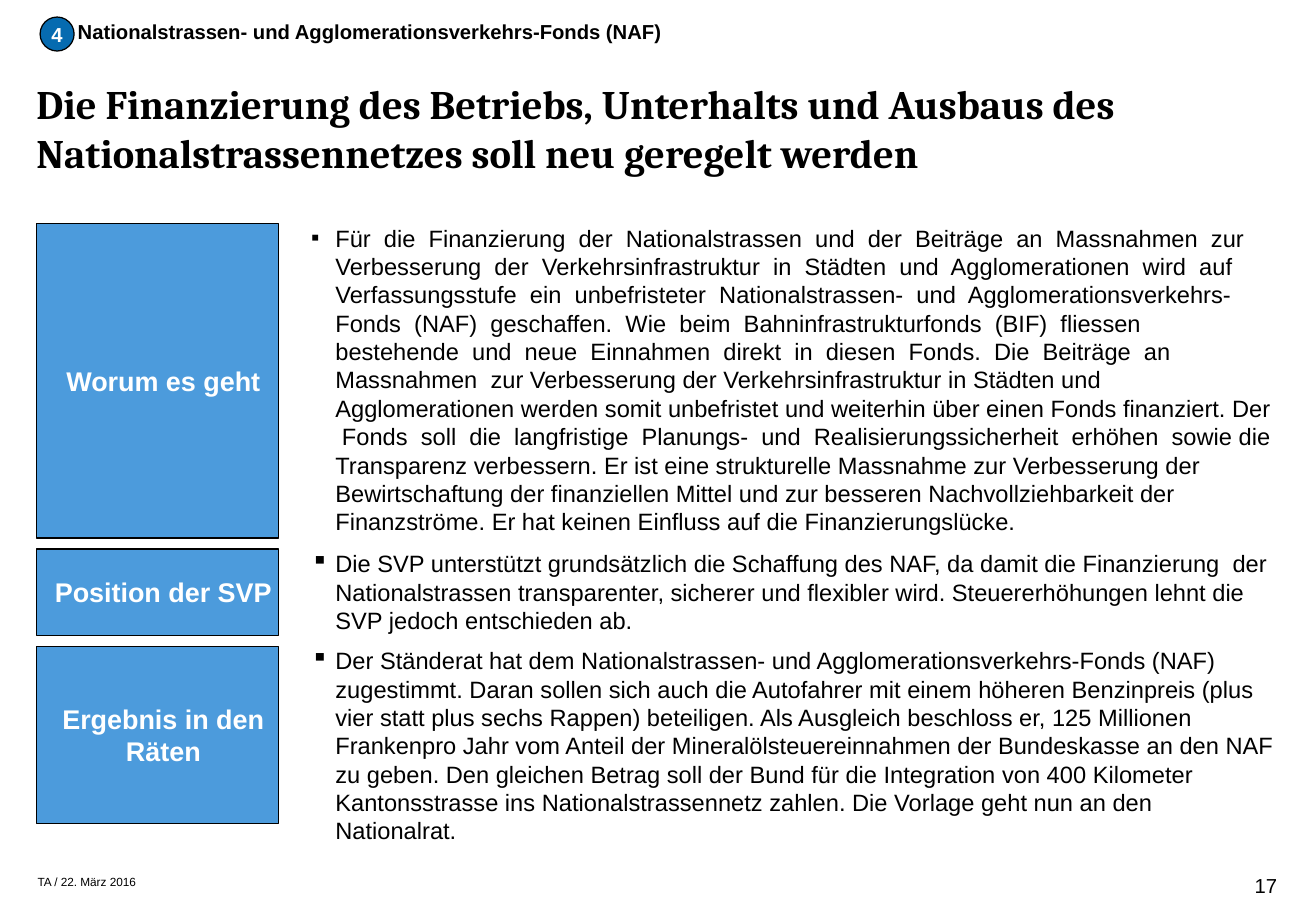
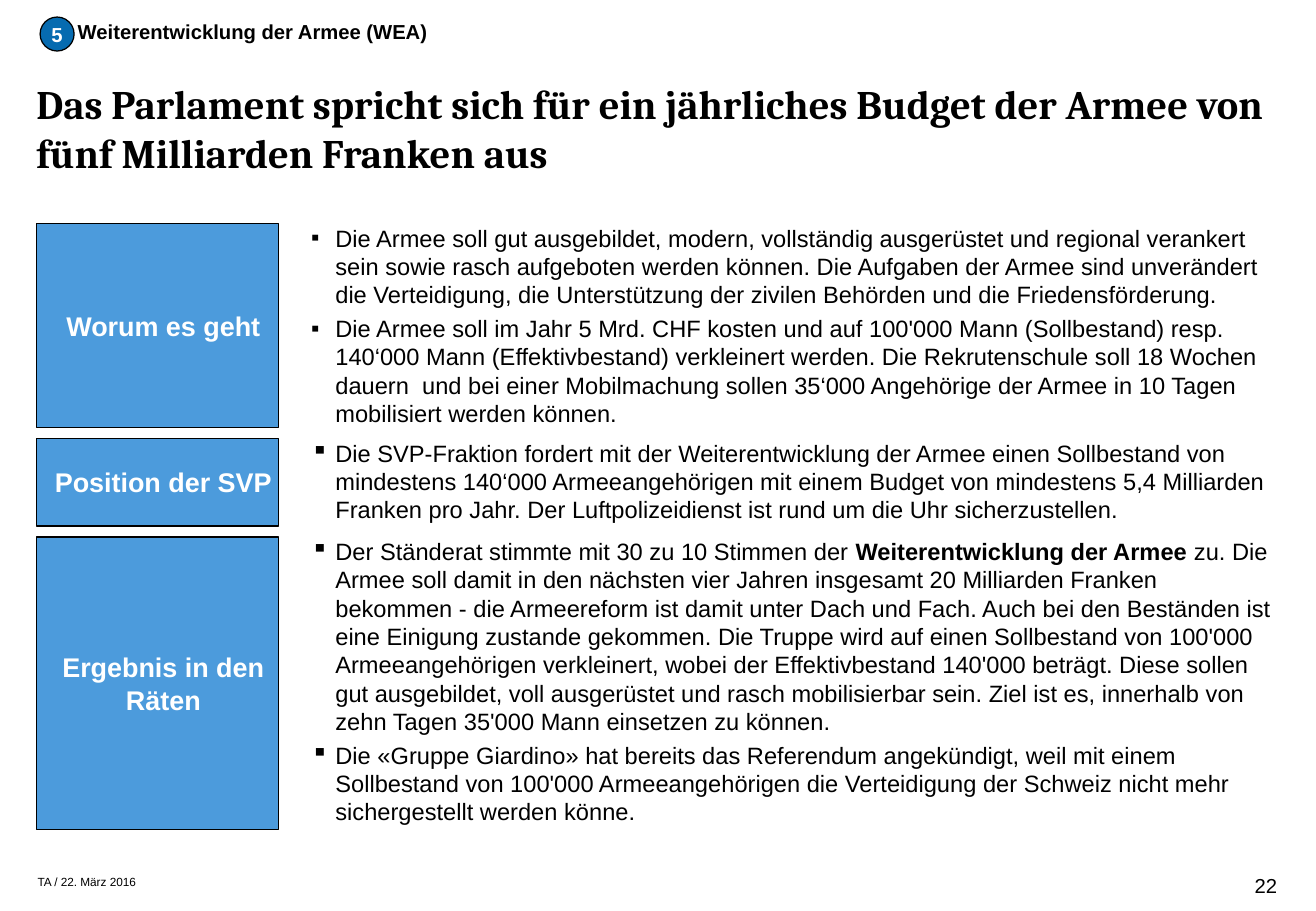
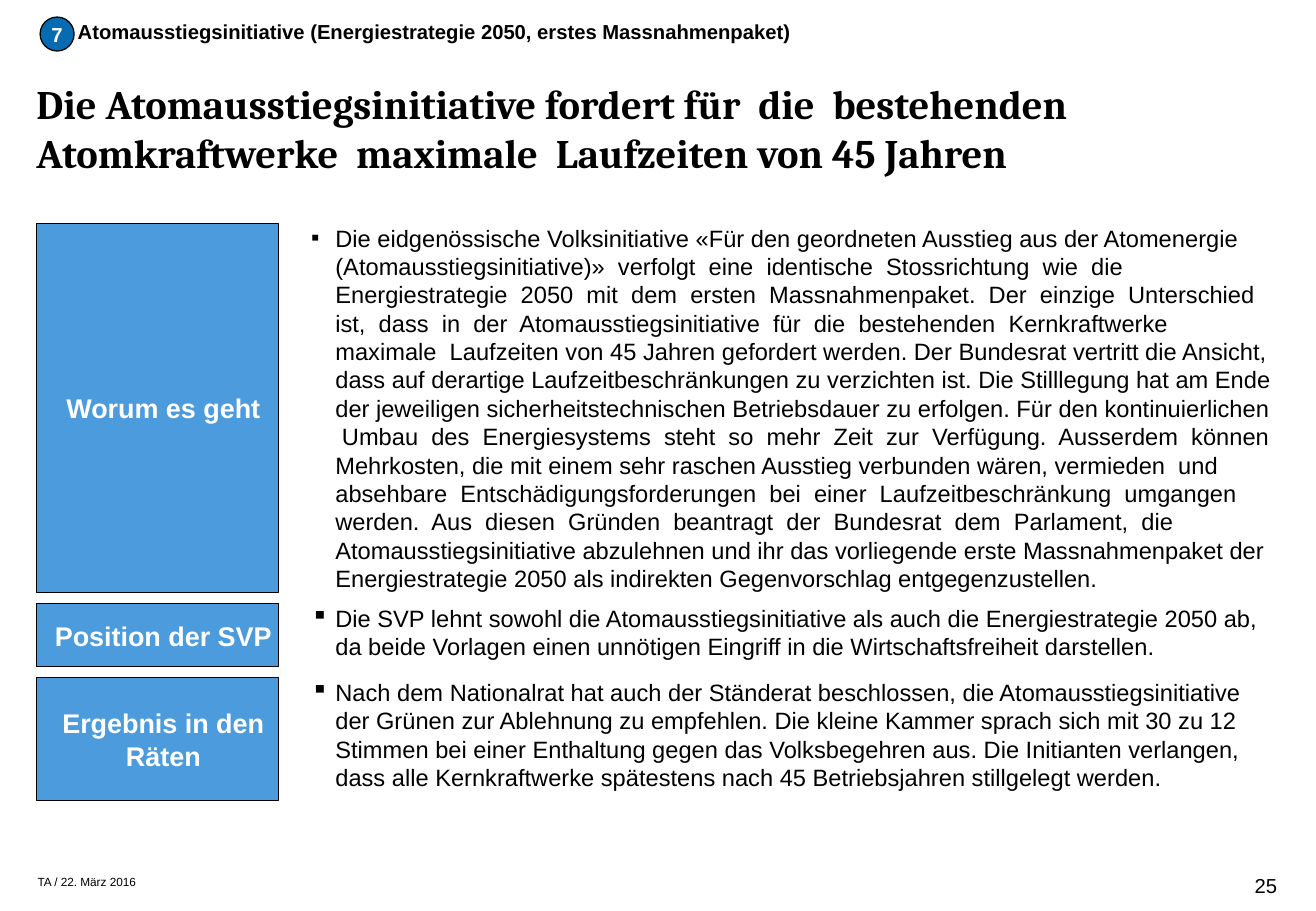
"""Three session-review slides: topic header, title and three labelled rows of bullets."""
from lxml import etree
from pptx import Presentation
from pptx.dml.color import RGBColor
from pptx.enum import shapes, text
from pptx.oxml.ns import qn
from pptx.util import Inches, Pt

COLOURS = {"label": "4C9BDC", "badge": "066BB0", "ink": "000000", "paper": "FFFFFF"}
LABELS = ["Worum es geht", "Position der SVP", "Ergebnis in den Räten"]
LEFT, LABEL_WIDTH = 0.3, 1.99
TEXT_LEFT, TEXT_WIDTH = 2.56, 7.95
ROWS_TOP, ROW_GAP = 1.84, 0.09

TOPICS = [
    {
        "number": "4",
        "page": "17",
        "topic": "Nationalstrassen- und Agglomerationsverkehrs-Fonds (NAF)",
        "title": "Die Finanzierung des Betriebs, Unterhalts und Ausbaus des "
                 "Nationalstrassennetzes soll neu geregelt werden",
        "rows": [
            (2.59, [" ".join([
                "Für  die  Finanzierung  der  Nationalstrassen  und  der  Beiträge  an  Massnahmen  zur "
                "Verbesserung  der  Verkehrsinfrastruktur  in  Städten  und  Agglomerationen  wird  auf  "
                "Verfassungsstufe  ein  unbefristeter  Nationalstrassen-  und  Agglomerationsverkehrs-"
                "Fonds  (NAF)  geschaffen.  Wie  beim  Bahninfrastrukturfonds  (BIF)  fliessen  "
                "bestehende  und  neue  Einnahmen  direkt  in  diesen  Fonds.  Die  Beiträge  an  "
                "Massnahmen  zur Verbesserung der Verkehrsinfrastruktur in Städten und "
                "Agglomerationen werden somit unbefristet und weiterhin über einen Fonds finanziert.",
                "Der  Fonds  soll  die  langfristige  Planungs-  und  Realisierungssicherheit  erhöhen  "
                "sowie die Transparenz verbessern. Er ist eine strukturelle Massnahme zur Verbesserung "
                "der Bewirtschaftung der finanziellen Mittel und zur besseren Nachvollziehbarkeit der "
                "Finanzströme. Er hat keinen Einfluss auf die Finanzierungslücke.",
            ])]),
            (0.71, [
                "Die SVP unterstützt grundsätzlich die Schaffung des NAF, da damit die Finanzierung  der  "
                "Nationalstrassen transparenter, sicherer und flexibler wird. Steuererhöhungen lehnt die "
                "SVP jedoch entschieden ab.",
            ]),
            (1.46, [
                "Der Ständerat hat dem Nationalstrassen- und Agglomerationsverkehrs-Fonds (NAF) "
                "zugestimmt. Daran sollen sich auch die Autofahrer mit einem höheren Benzinpreis (plus "
                "vier statt plus sechs Rappen) beteiligen. Als Ausgleich beschloss er, 125 Millionen "
                "Frankenpro Jahr vom Anteil der Mineralölsteuereinnahmen der Bundeskasse an den NAF "
                "zu geben. Den gleichen Betrag soll der Bund für die Integration von 400 Kilometer "
                "Kantonsstrasse ins Nationalstrassennetz zahlen. Die Vorlage geht nun an den "
                "Nationalrat.",
            ]),
        ],
    },
    {
        "number": "5",
        "page": "22",
        "topic": "Weiterentwicklung der Armee (WEA)",
        "title": "Das Parlament spricht sich für ein jährliches Budget der Armee von "
                 "fünf Milliarden Franken aus",
        "rows": [
            (1.68, [
                "Die Armee soll gut ausgebildet, modern, vollständig ausgerüstet und regional verankert "
                "sein sowie rasch aufgeboten werden können. Die Aufgaben der Armee sind unverändert "
                "die Verteidigung, die Unterstützung der zivilen Behörden und die Friedensförderung.",
                "Die Armee soll im Jahr 5 Mrd. CHF kosten und auf 100'000 Mann (Sollbestand) resp. "
                "140‘000 Mann (Effektivbestand) verkleinert werden. Die Rekrutenschule soll 18 Wochen "
                "dauern  und bei einer Mobilmachung sollen 35‘000 Angehörige der Armee in 10 Tagen "
                "mobilisiert werden können.",
            ]),
            (0.72, [
                "Die SVP-Fraktion fordert mit der Weiterentwicklung der Armee einen Sollbestand von "
                "mindestens 140‘000 Armeeangehörigen mit einem Budget von mindestens 5,4 Milliarden "
                "Franken pro Jahr. Der Luftpolizeidienst ist rund um die Uhr sicherzustellen.",
            ]),
            (2.41, [
                "Der Ständerat stimmte mit 30 zu 10 Stimmen der **Weiterentwicklung der Armee **zu. Die "
                "Armee soll damit in den nächsten vier Jahren insgesamt 20 Milliarden Franken "
                "bekommen - die Armeereform ist damit unter Dach und Fach. Auch bei den Beständen ist "
                "eine Einigung zustande gekommen. Die Truppe wird auf einen Sollbestand von 100'000 "
                "Armeeangehörigen verkleinert, wobei der Effektivbestand 140'000 beträgt. Diese sollen "
                "gut ausgebildet, voll ausgerüstet und rasch mobilisierbar sein. Ziel ist es, innerhalb von "
                "zehn Tagen 35'000 Mann einsetzen zu können.",
                "Die «Gruppe Giardino» hat bereits das Referendum angekündigt, weil mit einem "
                "Sollbestand von 100'000 Armeeangehörigen die Verteidigung der Schweiz nicht mehr "
                "sichergestellt werden könne.",
            ]),
        ],
    },
    {
        "number": "7",
        "page": "25",
        "topic": "Atomausstiegsinitiative (Energiestrategie 2050, erstes Massnahmenpaket)",
        "title": "Die Atomausstiegsinitiative fordert für  die  bestehenden  "
                 "Atomkraftwerke  maximale  Laufzeiten von 45 Jahren",
        "rows": [
            (3.04, [" ".join([
                "Die eidgenössische Volksinitiative «Für den geordneten Ausstieg aus der Atomenergie  "
                "(Atomausstiegsinitiative)»  verfolgt  eine  identische  Stossrichtung  wie  die  "
                "Energiestrategie  2050  mit  dem  ersten  Massnahmenpaket.  Der  einzige  Unterschied  "
                "ist,  dass  in  der  Atomausstiegsinitiative  für  die  bestehenden  Kernkraftwerke  "
                "maximale  Laufzeiten von 45 Jahren gefordert werden.",
                "Der Bundesrat vertritt die Ansicht, "
                "dass auf derartige Laufzeitbeschränkungen zu verzichten ist. Die Stilllegung hat am Ende "
                "der jeweiligen sicherheitstechnischen Betriebsdauer zu erfolgen. Für den kontinuierlichen  "
                "Umbau  des  Energiesystems  steht  so  mehr  Zeit  zur  Verfügung.  Ausserdem  können "
                "Mehrkosten, die mit einem sehr raschen Ausstieg verbunden wären, vermieden  und  "
                "absehbare  Entschädigungsforderungen  bei  einer  Laufzeitbeschränkung  umgangen  "
                "werden.  Aus  diesen  Gründen  beantragt  der  Bundesrat  dem  Parlament,  die "
                "Atomausstiegsinitiative abzulehnen und ihr das vorliegende erste Massnahmenpaket der "
                "Energiestrategie 2050 als indirekten Gegenvorschlag entgegenzustellen.",
            ])]),
            (0.52, [
                "Die SVP lehnt sowohl die Atomausstiegsinitiative als auch die Energiestrategie 2050 ab, "
                "da beide Vorlagen einen unnötigen Eingriff in die Wirtschaftsfreiheit darstellen.",
            ]),
            (1.01, [
                "Nach dem Nationalrat hat auch der Ständerat beschlossen, die Atomausstiegsinitiative "
                "der Grünen zur Ablehnung zu empfehlen. Die kleine Kammer sprach sich mit 30 zu 12 "
                "Stimmen bei einer Enthaltung gegen das Volksbegehren aus. Die Initianten verlangen, "
                "dass alle Kernkraftwerke spätestens nach 45 Betriebsjahren stillgelegt werden.",
            ]),
        ],
    },
]


def write(shape, paragraphs, size, font="Arial", colour="ink", bold=False, bullets=False,
          align=text.PP_ALIGN.LEFT, anchor=text.MSO_ANCHOR.TOP, inset=0, wrap=True):
    """Fill a shape with formatted paragraphs; ** marks bold passages."""
    frame = shape.text_frame
    frame.margin_left = Inches(inset)
    frame.margin_top = frame.margin_right = frame.margin_bottom = 0
    frame.auto_size = text.MSO_AUTO_SIZE.NONE
    frame.word_wrap = wrap
    frame.vertical_anchor = anchor
    for index, content in enumerate(paragraphs):
        paragraph = frame.add_paragraph() if index else frame.paragraphs[0]
        if bullets:
            properties = paragraph._p.get_or_add_pPr()
            properties.set("marL", str(Inches(0.2)))
            properties.set("indent", str(-Inches(0.2)))
            etree.SubElement(properties, qn("a:buChar")).set("char", "▪")
        paragraph.alignment = align
        paragraph.space_before = Pt(3 if index else 0)
        paragraph.font.name = font
        paragraph.font.size = Pt(size)
        paragraph.font.bold = bold
        paragraph.font.color.rgb = RGBColor.from_string(COLOURS[colour])
        for part, passage in enumerate(content.split("**")):
            run = paragraph.add_run()
            run.text = passage
            if part % 2:
                run.font.bold = True


def add_panel(slide, preset, box, fill, label, size, inset=0):
    """Add an outlined shape with a centred white label."""
    panel = slide.shapes.add_shape(preset, *map(Inches, box))
    panel.shadow.inherit = False
    panel.fill.solid()
    panel.fill.fore_color.rgb = RGBColor.from_string(COLOURS[fill])
    panel.line.color.rgb = RGBColor.from_string(COLOURS["ink"])
    panel.line.width = Pt(0.75)
    write(panel, [label], size, colour="paper", bold=True, inset=inset,
          align=text.PP_ALIGN.CENTER, anchor=text.MSO_ANCHOR.MIDDLE)


deck = Presentation()
deck.slide_width, deck.slide_height = Inches(10.83), Inches(7.5)
layout = deck.slide_layouts[1]

for topic in TOPICS:
    slide = deck.slides.add_slide(layout)
    title, first_answer = slide.placeholders
    title.left, title.top, title.width, title.height = map(Inches, (LEFT, 0.65, 10.21, 0.78))
    write(title, [topic["title"]], 24, font="Cambria", bold=True)

    top = ROWS_TOP
    for row, (label, (height, points)) in enumerate(zip(LABELS, topic["rows"])):
        area = [Inches(length) for length in (TEXT_LEFT, top, TEXT_WIDTH, height)]
        if row:
            answer = slide.shapes.add_textbox(*area)
        else:
            answer = first_answer
            answer.left, answer.top, answer.width, answer.height = area
        write(answer, points, 14, bullets=True)
        add_panel(slide, shapes.MSO_SHAPE.RECTANGLE, (LEFT, top, LABEL_WIDTH, height),
                  "label", label, 16, inset=0.1)
        top += height + ROW_GAP

    header = slide.shapes.add_textbox(Inches(0.64), Inches(0.16), Inches(6), Inches(0.2))
    write(header, [topic["topic"]], 12, bold=True, wrap=False)
    add_panel(slide, shapes.MSO_SHAPE.OVAL, (0.33, 0.14, 0.28, 0.28), "badge", topic["number"], 12)
    page = slide.shapes.add_textbox(Inches(9.92), Inches(7.19), Inches(0.59), Inches(0.2))
    write(page, [topic["page"]], 12, align=text.PP_ALIGN.RIGHT)

footer = slide.shapes.add_textbox(Inches(0.31), Inches(7.2), Inches(0.84), Inches(0.12))
write(footer, ["TA / 22. März 2016"], 7, wrap=False)
layout.element.cSld.spTree.append(footer.element)

deck.save("out.pptx")
